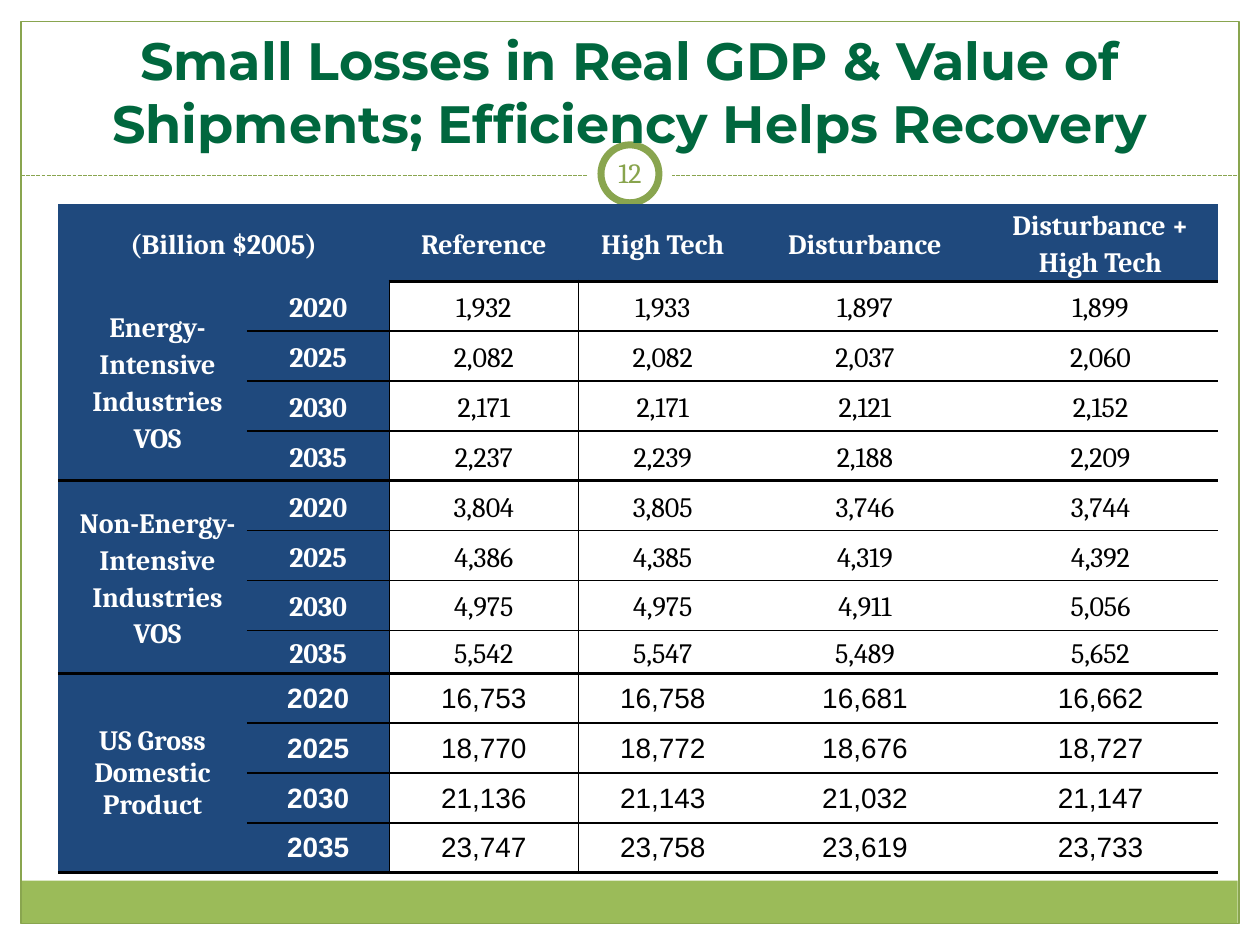
"""Build the slide on losses in real GDP and value of shipments."""
from lxml.etree import SubElement
from pptx import Presentation
from pptx.dml.color import RGBColor
from pptx.enum.dml import MSO_LINE
from pptx.enum.shapes import MSO_CONNECTOR, MSO_SHAPE as Shape
from pptx.enum.text import MSO_ANCHOR as Anchor, MSO_AUTO_SIZE as AutoSize, PP_ALIGN as Align
from pptx.oxml.ns import qn
from pptx.util import Pt

WHITE = RGBColor(0xFF, 0xFF, 0xFF)
BLACK = RGBColor(0, 0, 0)
NAVY = RGBColor(0x1F, 0x49, 0x7D)
GREEN = RGBColor(0x9B, 0xBB, 0x59)
OLIVE = RGBColor(0x89, 0xA5, 0x4F)
NUMBER_GREEN = RGBColor(0x88, 0xA4, 0x4D)
TITLE_GREEN = RGBColor(0x00, 0x67, 0x3E)

THIN, THICK = 1, 2.25
NO_GRID_STYLE = "{2D5ABB26-0587-4C30-8999-92F81FD0307C}"
COLUMN_WIDTHS = [108, 81.36, 108, 96.48, 134.64, 134.64]
ROW_HEIGHTS = [43.9] + [28.5] * 7 + [24.5] + [28.5] * 4
YEARS = ["2020", "2025", "2030", "2035"]
SCENARIOS = ["Reference", "High Tech", "Disturbance", "Disturbance + High Tech"]
SERIF = {"font": "Cambria", "margins": (5.04, 0, 5.04, 0), "spacing": 1.15}
SANS = {"font": "Arial", "margins": (0.72, 0.72, 0.72, 0), "spacing": None}
GROUPS = [
    (["Energy-Intensive Industries", "VOS"], SERIF, [
        ["1,932", "1,933", "1,897", "1,899"],
        ["2,082", "2,082", "2,037", "2,060"],
        ["2,171", "2,171", "2,121", "2,152"],
        ["2,237", "2,239", "2,188", "2,209"]]),
    (["Non-Energy-Intensive Industries", "VOS"], SERIF, [
        ["3,804", "3,805", "3,746", "3,744"],
        ["4,386", "4,385", "4,319", "4,392"],
        ["4,975", "4,975", "4,911", "5,056"],
        ["5,542", "5,547", "5,489", "5,652"]]),
    (["US Gross Domestic Product"], SANS, [
        ["16,753", "16,758", "16,681", "16,662"],
        ["18,770", "18,772", "18,676", "18,727"],
        ["21,136", "21,143", "21,032", "21,147"],
        ["23,747", "23,758", "23,619", "23,733"]]),
]


def apply(target, values):
    """Set each named attribute of the target."""
    for name, value in values.items():
        setattr(target, name, value)


def set_margins(target, margins):
    """Set left, top, right and bottom margins."""
    sides = ("margin_left", "margin_top", "margin_right", "margin_bottom")
    apply(target, dict(zip(sides, map(Pt, margins))))


def write(frame, lines, font, size, color, bold=False, spacing=None, indent=0):
    """Write centred lines as paragraphs of a text frame."""
    for index, line in enumerate(lines):
        paragraph = frame.add_paragraph() if index else frame.paragraphs[0]
        apply(paragraph, {"alignment": Align.CENTER, "line_spacing": spacing})
        if indent:
            paragraph._p.get_or_add_pPr().set("marL", str(Pt(indent)))
        run = paragraph.add_run()
        run.text = line
        apply(run.font, {"name": font, "size": Pt(size), "bold": bold})
        run.font.color.rgb = color


def add_panel(slide, kind, box, fill=None, line=None, weight=0.75):
    """Add a flat preset shape."""
    panel = slide.shapes.add_shape(kind, *map(Pt, box))
    panel.shadow.inherit = False
    if fill is None:
        panel.fill.background()
    else:
        panel.fill.solid()
        panel.fill.fore_color.rgb = fill
    if line is None:
        panel.line.fill.background()
    else:
        panel.line.color.rgb = line
        panel.line.width = Pt(weight)


def add_divider(slide, left, right, y):
    """Add the dashed rule below the title."""
    divider = slide.shapes.add_connector(MSO_CONNECTOR.STRAIGHT, Pt(left), Pt(y), Pt(right), Pt(y))
    divider.line.color.rgb = OLIVE
    apply(divider.line, {"width": Pt(0.75), "dash_style": MSO_LINE.SQUARE_DOT})
    SubElement(divider._element.spPr, qn("a:effectLst"))


def add_text(slide, box, text, margins, frame_format, **style):
    """Add a wrapping text box."""
    frame = slide.shapes.add_textbox(*map(Pt, box)).text_frame
    apply(frame, {"word_wrap": True, **frame_format})
    set_margins(frame, margins)
    write(frame, [text], **style)


def add_borders(cell, weights):
    """Draw black borders on the sides given in L, R, T, B order."""
    properties = cell._tc.get_or_add_tcPr()
    for side, weight in weights.items():
        border = SubElement(properties, qn(f"a:ln{side}"), w=str(Pt(weight)))
        fill = SubElement(border, qn("a:solidFill"))
        SubElement(fill, qn("a:srgbClr"), val=str(BLACK))


def fill_cell(cell, lines, layout, borders, heading=True, font=None, indent=0):
    """Write and format one table cell."""
    cell.vertical_anchor = Anchor.MIDDLE
    set_margins(cell, layout["margins"])
    add_borders(cell, borders)
    if heading:
        cell.fill.solid()
        cell.fill.fore_color.rgb = NAVY
    else:
        cell.fill.background()
    write(cell.text_frame, lines, font or layout["font"], 16, WHITE if heading else BLACK,
          heading, layout["spacing"], indent)


def fill_group(table, top, labels, layout, rows):
    """Fill one measure: its merged label, its years and its values."""
    last = top + len(rows) - 1
    label = table.cell(top, 0)
    label.merge(table.cell(last, 0))
    above = {"T": THICK} if top > 1 else {}
    fill_cell(label, labels, layout, {**above, "B": THICK}, font="Cambria",
              indent=5.76 if layout is SERIF else 0)
    for row, (year, values) in enumerate(zip(YEARS, rows), top):
        upper = THICK if row == top else THIN
        lower = {"B": THICK if row == last else THIN}
        year_top = {"T": upper} if row > 1 else {}
        fill_cell(table.cell(row, 1), [year], layout, {"R": THIN, **year_top, **lower})
        for column, value in enumerate(values, 2):
            left = {"L": THIN} if column == 2 else {}
            fill_cell(table.cell(row, column), [value], layout,
                      {**left, "T": upper, **lower}, heading=False)


def add_results(slide):
    """Add the table of scenario results."""
    table = slide.shapes.add_table(
        len(ROW_HEIGHTS), len(COLUMN_WIDTHS), Pt(33.12), Pt(116.64),
        Pt(sum(COLUMN_WIDTHS)), Pt(sum(ROW_HEIGHTS))).table
    apply(table, {"first_row": False, "horz_banding": False})
    table._tbl.tblPr.find(qn("a:tableStyleId")).text = NO_GRID_STYLE
    for column, width in zip(table.columns, COLUMN_WIDTHS):
        column.width = Pt(width)
    for row, height in zip(table.rows, ROW_HEIGHTS):
        row.height = Pt(height)
    unit = table.cell(0, 0)
    unit.merge(table.cell(0, 1))
    fill_cell(unit, ["(Billion $2005)"], SERIF, {})
    for column, scenario in enumerate(SCENARIOS, 2):
        fill_cell(table.cell(0, column), [scenario], SERIF, {"B": THICK})
    for index, group in enumerate(GROUPS):
        fill_group(table, 1 + index * len(YEARS), *group)


def main():
    """Build and save the slide."""
    deck = Presentation()
    apply(deck, {"slide_width": Pt(720), "slide_height": Pt(540)})
    slide = deck.slides.add_slide(deck.slide_layouts[6])
    for box in [(0, 0, 720, 109.44), (0, 0, 12, 540), (708, 0, 12, 540)]:
        add_panel(slide, Shape.RECTANGLE, box, WHITE)
    add_panel(slide, Shape.RECTANGLE, (11.75, 503.25, 695.5, 24.5), GREEN)
    add_panel(slide, Shape.RECTANGLE, (12, 12.25, 696, 515.5), line=OLIVE)
    add_divider(slide, 12, 708, 100.5)
    add_panel(slide, Shape.OVAL, (336, 75.6, 48, 48), WHITE)
    add_panel(slide, Shape.OVAL, (343.44, 82.8, 33.12, 33.12), WHITE, OLIVE, 4)
    add_text(slide, (342, 81.36, 36, 34.56), "12", (3.6,) * 4,
             {"vertical_anchor": Anchor.MIDDLE}, font="Cambria", size=16, color=NUMBER_GREEN)
    add_text(slide, (24, 12.24, 672, 79.92),
             "Small Losses in Real GDP & Value of Shipments; Efficiency Helps Recovery",
             (7.2, 3.6, 7.2, 3.6), {"auto_size": AutoSize.SHAPE_TO_FIT_TEXT},
             font="Montserrat", size=30, color=TITLE_GREEN, bold=True)
    add_results(slide)
    deck.save("out.pptx")


if __name__ == "__main__":
    main()
